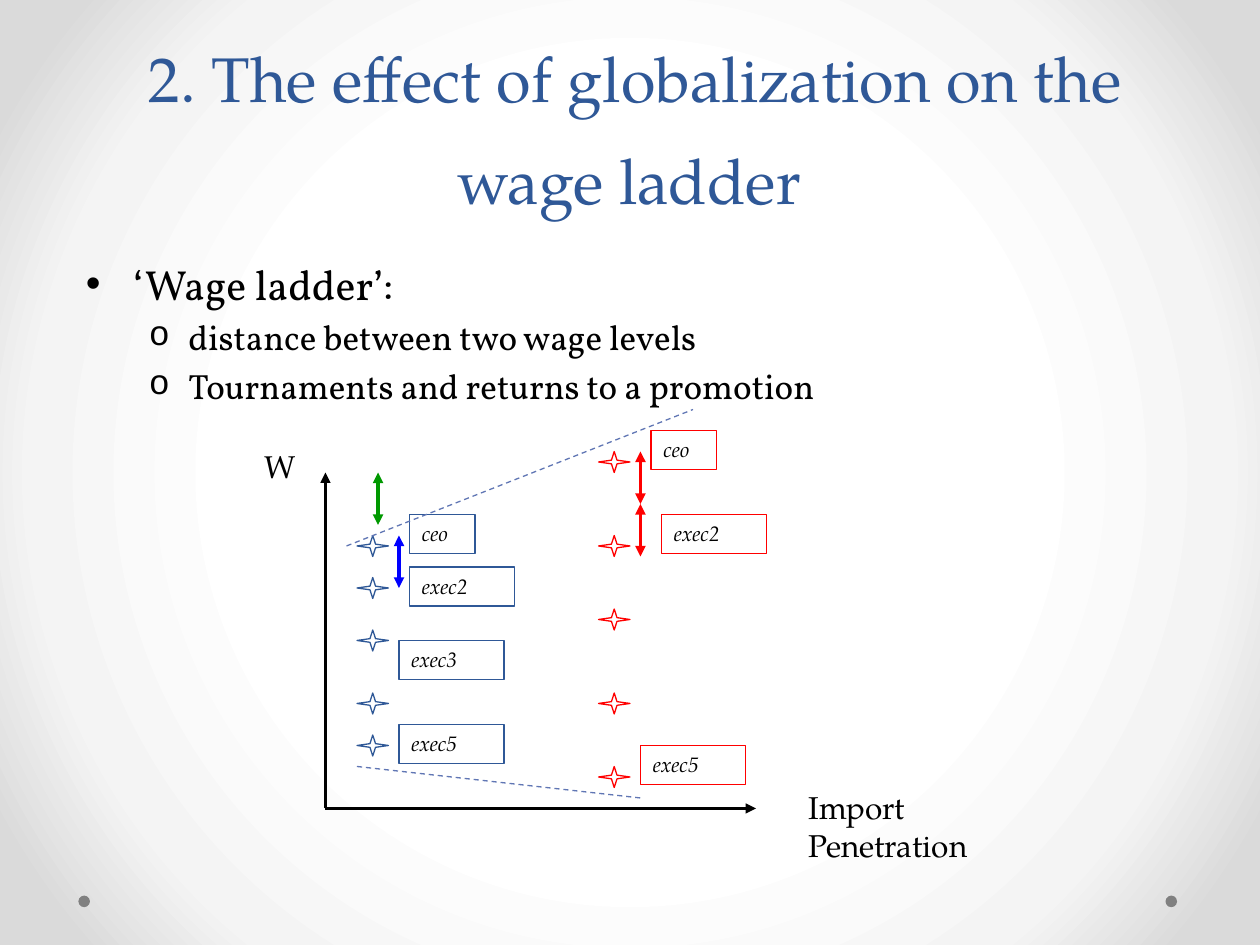
from typing import NamedTuple

from pptx import Presentation
from pptx.dml.color import RGBColor
from pptx.enum.dml import MSO_LINE
from pptx.enum.shapes import MSO_CONNECTOR, MSO_SHAPE
from pptx.enum.text import MSO_ANCHOR, PP_ALIGN
from pptx.oxml import parse_xml
from pptx.oxml.ns import nsdecls
from pptx.util import Pt

STAR, RECTANGLE, OVAL = MSO_SHAPE.STAR_4_POINT, MSO_SHAPE.RECTANGLE, MSO_SHAPE.OVAL
STRAIGHT, DASH = MSO_CONNECTOR.STRAIGHT, MSO_LINE.DASH
CENTER, LEFT = PP_ALIGN.CENTER, PP_ALIGN.LEFT
TOP, BOTTOM = MSO_ANCHOR.TOP, MSO_ANCHOR.BOTTOM

SERIF, BODY = "TeX Gyre Pagella", "Vollkorn"
COLORS = {
    "black": "000000", "navy": "2F5897", "red": "FF0000", "blue": "0000FF",
    "green": "009900", "trend": "6076B4", "dot": "808080",
}
BACKGROUND_STOPS = {50: "FFFFFF", 76: "F4F4F4", 92: "DADADA"}


class Label(NamedTuple):
    text: str
    left: float
    top: float
    color: str
    width: float = 60


class Line(NamedTuple):
    start: tuple[float, float]
    end: tuple[float, float]
    color: str
    width: float
    ends: tuple[str, ...] = ()
    dashed: bool = False


class Bullet(NamedTuple):
    text: str
    level: int
    size: float
    margin: float
    hanging: float
    before: float
    mark: str
    mark_font: str


BULLETS = [
    Bullet("‘Wage ladder’:", 0, 24, 27, 27, 4.8, "•", "Arial"),
    Bullet("distance between two wage levels", 1, 20, 58.5, 22.5, 4, "o", "Courier New"),
    Bullet("Tournaments and returns to a promotion", 1, 20, 58.5, 22.5, 4, "o", "Courier New"),
]
# Star columns: left edge, colour, tops
STARS = [
    (204, "navy", (306, 330, 360, 396, 420)),
    (342, "red", (258, 306, 348, 396, 438)),
]
LABELS = [
    Label("ceo", 234, 294, "navy", 37.5),
    Label("exec2", 234, 324, "navy"),
    Label("exec3", 228, 366, "navy"),
    Label("exec5", 228, 414, "navy"),
    Label("ceo", 372, 246, "red", 37.5),
    Label("exec2", 378, 294, "red"),
    Label("exec5", 366, 426, "red"),
]
BOTH = ("headEnd", "tailEnd")
LINES = [
    Line((186, 270), (186, 462), "black", 1.5, ("headEnd",)),
    Line((186, 462), (432, 462), "black", 1.5, ("tailEnd",)),
    Line((198, 312), (396, 234), "trend", 0.75, dashed=True),
    Line((204, 438), (366, 456), "trend", 0.75, dashed=True),
    Line((228, 306), (228, 336), "blue", 2, BOTH),
    Line((366, 258), (366, 288), "red", 2, BOTH),
    Line((366, 288), (366, 318), "red", 2, BOTH),
    Line((216, 270), (216, 300), "green", 2, BOTH),
]


def rgb(name: str) -> RGBColor:
    return RGBColor.from_string(COLORS[name])


def add_run(paragraph, text: str, size: float, font: str = SERIF,
            color: str = "black", italic: bool = False) -> None:
    run = paragraph.add_run()
    run.text = text
    run.font.size = Pt(size)
    run.font.name = font
    run.font.italic = italic
    run.font.color.rgb = rgb(color)


def add_text_box(slide, left: float, top: float, width: float, height: float,
                 anchor=TOP):
    shape = slide.shapes.add_textbox(Pt(left), Pt(top), Pt(width), Pt(height))
    shape.text_frame.word_wrap = True
    shape.text_frame.vertical_anchor = anchor
    return shape.text_frame


def add_shape(slide, kind, left: float, top: float, width: float, height: float,
              line: str = "", fill: str = ""):
    shape = slide.shapes.add_shape(kind, Pt(left), Pt(top), Pt(width), Pt(height))
    shape.shadow.inherit = False
    if fill:
        shape.fill.solid()
        shape.fill.fore_color.rgb = rgb(fill)
    else:
        shape.fill.background()
    if line:
        shape.line.color.rgb = rgb(line)
        shape.line.width = Pt(0.75)
    else:
        shape.line.fill.background()
    return shape


def add_label(slide, label: Label) -> None:
    shape = add_shape(slide, RECTANGLE, label.left, label.top, label.width, 22.3, label.color)
    frame = shape.text_frame
    frame.word_wrap = True
    frame.vertical_anchor = TOP
    frame.paragraphs[0].alignment = LEFT
    add_run(frame.paragraphs[0], label.text, 12, italic=True)


def add_line(slide, line: Line) -> None:
    points = [Pt(value) for value in line.start + line.end]
    connector = slide.shapes.add_connector(STRAIGHT, *points)
    connector.line.color.rgb = rgb(line.color)
    connector.line.width = Pt(line.width)
    if line.dashed:
        connector.line.dash_style = DASH
    outline = connector.line._get_or_add_ln()
    for end in line.ends:
        outline.append(parse_xml(f'<a:{end} {nsdecls("a")} type="triangle"/>'))
    connector.element.spPr.append(parse_xml(f'<a:effectLst {nsdecls("a")}/>'))


def add_bullet(paragraph, bullet: Bullet) -> None:
    paragraph.level = bullet.level
    paragraph.space_before = Pt(bullet.before)
    properties = paragraph._p.get_or_add_pPr()
    properties.set("marL", str(Pt(bullet.margin)))
    properties.set("indent", str(-Pt(bullet.hanging)))
    properties.append(parse_xml(f'<a:buFont {nsdecls("a")} typeface="{bullet.mark_font}"/>'))
    properties.append(parse_xml(f'<a:buChar {nsdecls("a")} char="{bullet.mark}"/>'))
    add_run(paragraph, bullet.text, bullet.size, BODY)


def set_background(slide) -> None:
    stops = "".join(f'<a:gs pos="{position * 1000}"><a:srgbClr val="{color}"/></a:gs>'
                    for position, color in BACKGROUND_STOPS.items())
    slide.element.cSld.insert(0, parse_xml(
        f'<p:bg {nsdecls("p", "a")}><p:bgPr><a:gradFill><a:gsLst>{stops}</a:gsLst>'
        '<a:path path="circle"><a:fillToRect l="50000" t="50000" r="50000" b="50000"/>'
        '</a:path></a:gradFill><a:effectLst/></p:bgPr></p:bg>'))


def main() -> None:
    presentation = Presentation()
    presentation.slide_width, presentation.slide_height = Pt(720), Pt(540)
    slide = presentation.slides.add_slide(presentation.slide_layouts[6])

    # Background and corner dots
    set_background(slide)
    for left in (666, 44.8):
        add_shape(slide, OVAL, left, 511.8, 6.6, 6.6, fill="dot")

    # Title
    title = add_text_box(slide, 42, 37.5, 642, 90, BOTTOM).paragraphs[0]
    title.alignment = CENTER
    title.line_spacing = Pt(58)
    add_run(title, "2. The effect of globalization on the wage ladder", 36, color="navy")
    add_run(title, " ", 28, color="navy")

    # Bullets
    body = add_text_box(slide, 42, 144, 618, 318)
    for index, bullet in enumerate(BULLETS):
        add_bullet(body.add_paragraph() if index else body.paragraphs[0], bullet)

    # Axis names
    add_run(add_text_box(slide, 455, 447, 158, 29).paragraphs[0], "Import Penetration", 18)
    add_run(add_text_box(slide, 144, 252, 31, 29).paragraphs[0], "W", 18)

    # Wage levels, their labels, axes, trends and gaps
    for left, color, tops in STARS:
        for top in tops:
            add_shape(slide, STAR, left, top, 18, 12, color).adjustments[0] = 0.125
    for label in LABELS:
        add_label(slide, label)
    for line in LINES:
        add_line(slide, line)

    presentation.save("out.pptx")


if __name__ == "__main__":
    main()
